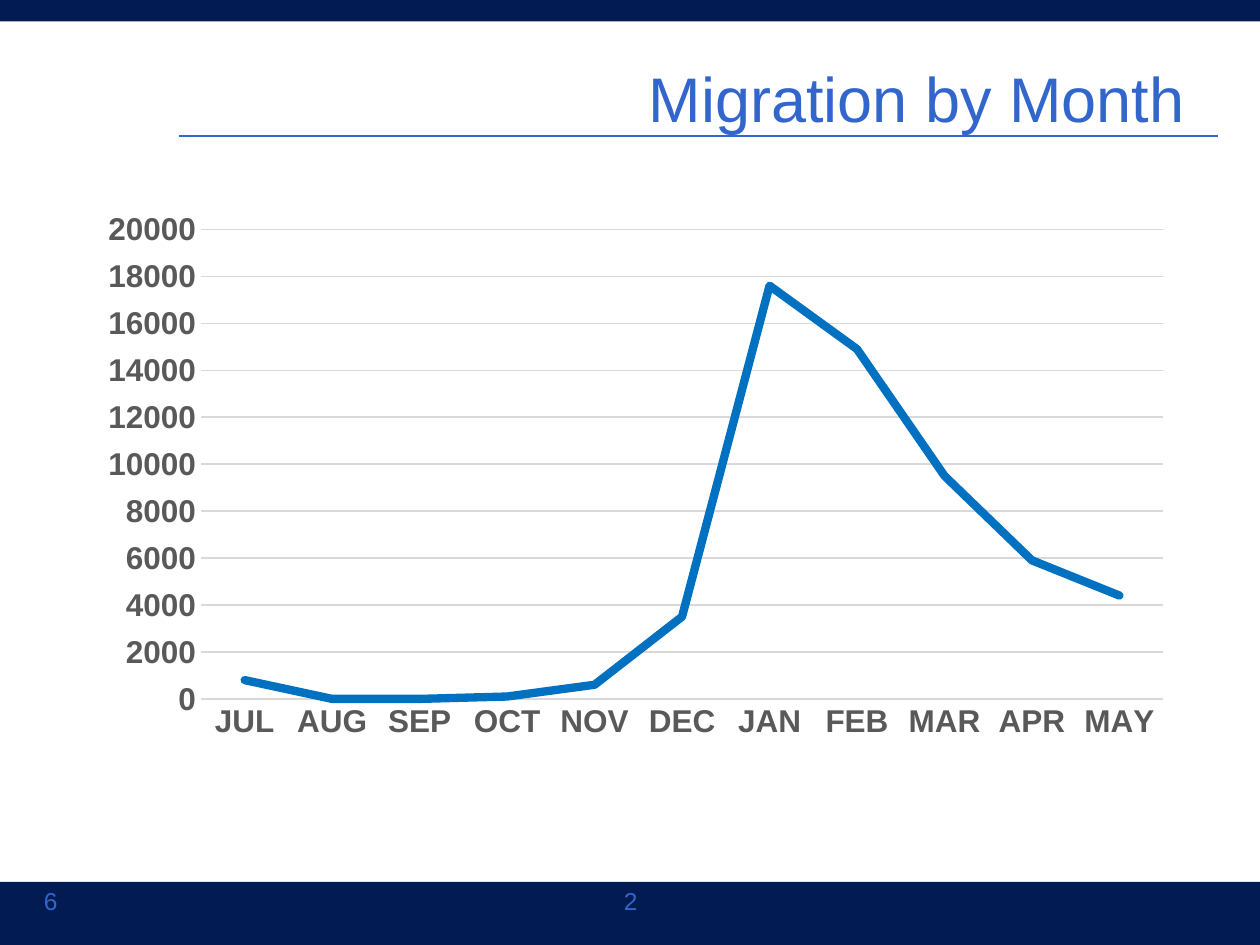
import pptx
import pptx.util
import pptx.chart.data
import pptx.dml.color
import pptx.enum.chart
import pptx.enum.shapes
import pptx.enum.text
import pptx.oxml
import pptx.oxml.ns
from pptx.util import Inches

FONT = "Arial"
NAVY, BLUE, LINE_BLUE = "021B52", "3366CC", "0070C0"
GRAY, LIGHT_GRAY = "595959", "D9D9D9"
ALIGN = pptx.enum.text.PP_ALIGN
ANCHOR = pptx.enum.text.MSO_ANCHOR

MONTHS = ["JUL", "AUG", "SEP", "OCT", "NOV", "DEC", "JAN", "FEB", "MAR", "APR", "MAY"]
MIGRATION = [800, 0, 0, 100, 600, 3500, 17600, 14900, 9500, 5900, 4400]


def color(hex_text):
    return pptx.dml.color.RGBColor.from_string(hex_text)


def style_line(line, hex_text, width):
    line.color.rgb = color(hex_text)
    line.width = pptx.util.Pt(width)


def add_text(slide, box, text, size=14, align=ALIGN.LEFT, anchor=ANCHOR.TOP):
    shape = slide.shapes.add_textbox(*map(Inches, box))
    frame = shape.text_frame
    frame.word_wrap = True
    frame.vertical_anchor = anchor
    paragraph = frame.paragraphs[0]
    paragraph.text = text
    paragraph.alignment = align
    paragraph.font.name = FONT
    paragraph.font.size = pptx.util.Pt(size)
    paragraph.font.color.rgb = color(BLUE)


def add_band(slide, box):
    band = slide.shapes.add_shape(pptx.enum.shapes.MSO_SHAPE.RECTANGLE, *map(Inches, box))
    band.shadow.inherit = False
    band.fill.solid()
    band.fill.fore_color.rgb = color(NAVY)
    band.line.fill.background()


def add_header(slide, box):
    left, top, width, height = box
    add_band(slide, (left, top, width, 0.17))
    rule = slide.shapes.add_connector(
        pptx.enum.shapes.MSO_CONNECTOR.STRAIGHT,
        Inches(left + 1.42), Inches(top + 1.08), Inches(left + 9.67), Inches(top + 1.08))
    style_line(rule.line, BLUE, 0.75)
    rule._element.spPr.append(pptx.oxml.parse_xml(
        f'<a:effectLst {pptx.oxml.ns.nsdecls("a")}/>'))
    add_text(slide, (left + 0.5, top + 0.3, width - 1, height - 0.3), "Migration by Month",
             size=36, align=ALIGN.RIGHT, anchor=ANCHOR.MIDDLE)


def add_footer(slide, box):
    left, top, width, height = box
    add_band(slide, box)
    add_text(slide, (left + 3.42, top - 0.02, 3.17, height), "2", align=ALIGN.CENTER)
    add_text(slide, (left + 0.25, top - 0.02, 0.75, height), "6")


def style_axis(axis):
    axis.major_tick_mark = pptx.enum.chart.XL_TICK_MARK.NONE
    axis.minor_tick_mark = pptx.enum.chart.XL_TICK_MARK.NONE
    font = axis.tick_labels.font
    font.name = FONT
    font.size = pptx.util.Pt(18)
    font.bold = True
    font.color.rgb = color(GRAY)


def set_plot_layout(chart, x, y, width, height):
    """Fix the inner plot area, in fractions of the chart's size."""
    plot_area = chart._chartSpace.chart.plotArea
    for old in plot_area.findall(pptx.oxml.ns.qn("c:layout")):
        plot_area.remove(old)
    values = [("layoutTarget", "inner"), ("xMode", "edge"), ("yMode", "edge"),
              ("x", x), ("y", y), ("w", width), ("h", height)]
    parts = "".join(f'<c:{tag} val="{value}"/>' for tag, value in values)
    plot_area.insert(0, pptx.oxml.parse_xml(
        f'<c:layout {pptx.oxml.ns.nsdecls("c")}>'
        f'<c:manualLayout>{parts}</c:manualLayout></c:layout>'))


def add_migration_chart(slide, box):
    data = pptx.chart.data.CategoryChartData()
    data.categories = MONTHS
    data.add_series("Series 1", MIGRATION)
    chart = slide.shapes.add_chart(
        pptx.enum.chart.XL_CHART_TYPE.LINE, *map(Inches, box), data).chart
    chart.has_legend = False
    chart.has_title = False
    chart.font.name = FONT
    chart.font.size = pptx.util.Pt(18)
    chart.font.bold = True
    chart.font.color.rgb = color("000000")
    set_plot_layout(chart, 0.124, 0.062, 0.865, 0.721)

    style_axis(chart.category_axis)
    style_line(chart.category_axis.format.line, LIGHT_GRAY, 0.75)
    value_axis = chart.value_axis
    style_axis(value_axis)
    value_axis.minimum_scale = 0
    value_axis.maximum_scale = 20000
    value_axis.major_unit = 2000
    value_axis.format.line.fill.background()
    value_axis.has_major_gridlines = True
    style_line(value_axis.major_gridlines.format.line, LIGHT_GRAY, 0.75)

    plot = chart.plots[0]
    plot.vary_by_categories = False
    series = plot.series[0]
    series.smooth = False
    series.marker.style = pptx.enum.chart.XL_MARKER_STYLE.NONE
    style_line(series.format.line, LINE_BLUE, 4.75)
    series.format.line._get_or_add_ln().set("cap", "rnd")


def main():
    presentation = pptx.Presentation()
    presentation.slide_width = Inches(10)
    presentation.slide_height = Inches(7.5)
    slide = presentation.slides.add_slide(presentation.slide_layouts[6])
    add_header(slide, (0, 0, 10, 1.25))
    add_footer(slide, (0, 7, 10, 0.5))
    add_migration_chart(slide, (0.5, 1.5, 8.83, 5.17))
    presentation.save("out.pptx")


if __name__ == "__main__":
    main()
